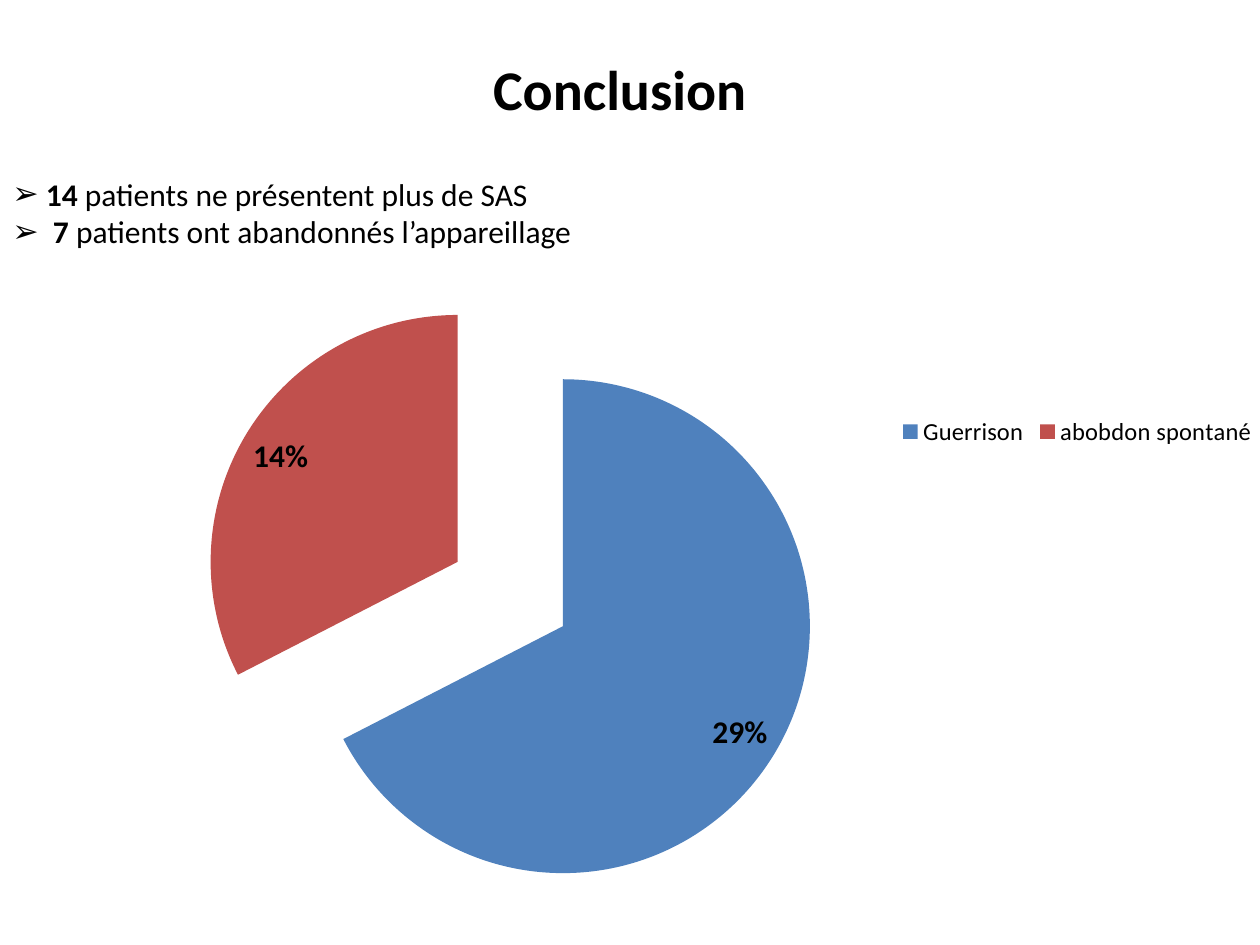
from dataclasses import dataclass

from lxml.etree import SubElement
from pptx import Presentation
from pptx.chart.data import CategoryChartData
from pptx.dml.color import RGBColor
from pptx.enum.chart import XL_CHART_TYPE as ChartType
from pptx.enum.chart import XL_LABEL_POSITION as LabelPosition
from pptx.enum.chart import XL_LEGEND_POSITION as LegendPosition
from pptx.enum.text import MSO_ANCHOR as Anchor
from pptx.enum.text import PP_ALIGN as Align
from pptx.oxml import parse_xml
from pptx.oxml.ns import nsdecls, qn
from pptx.util import Inches, Pt

FONT = "Calibri"
BLACK = RGBColor(0x00, 0x00, 0x00)
BLUE = RGBColor(0x4F, 0x81, 0xBD)
RED = RGBColor(0xC0, 0x50, 0x4D)


@dataclass
class Finding:
    count: str
    detail: str


@dataclass
class Slice:
    label: str
    share: float
    color: RGBColor


FINDINGS = [
    Finding(" 14", " patients ne présentent plus de SAS"),
    Finding("  7", " patients ont abandonnés l’appareillage"),
]
SLICES = [
    Slice("Guerrison", 0.29, BLUE),
    Slice("abobdon spontané", 0.14, RED),
]


def style_font(font, size: float, bold: bool = False) -> None:
    font.name = FONT
    font.size = Pt(size)
    font.bold = bold
    font.color.rgb = BLACK


def add_span(para, text: str, size: float, bold: bool = False) -> None:
    span = para.add_run()
    span.text = text
    style_font(span.font, size, bold)


def add_finding(para, finding: Finding) -> None:
    props = para._p.get_or_add_pPr()
    props.set("marL", "0")
    props.set("indent", "0")
    SubElement(props, qn("a:buFont"), typeface="Wingdings 2")
    SubElement(props, qn("a:buChar"), char="➢")
    props.find(qn("a:buFont")).set("typeface", "Arial")
    add_span(para, finding.count, 18, bold=True)
    add_span(para, finding.detail, 18)


def make_layout(x: float, y: float, w: float, h: float, inner: bool = False):
    """Manual layout, as fractions of the chart's size."""
    target = '<c:layoutTarget val="inner"/>' if inner else ""
    return parse_xml(
        f'<c:layout {nsdecls("c")}><c:manualLayout>{target}'
        '<c:xMode val="edge"/><c:yMode val="edge"/>'
        f'<c:x val="{x}"/><c:y val="{y}"/><c:w val="{w}"/><c:h val="{h}"/>'
        "</c:manualLayout></c:layout>"
    )


def add_pie(page, slices: list[Slice]) -> None:
    data = CategoryChartData(number_format="0%")
    data.categories = [item.label for item in slices]
    data.add_series("Series 1", [item.share for item in slices])
    chart = page.shapes.add_chart(
        ChartType.PIE_EXPLODED, Inches(0), Inches(2.11), Inches(10), Inches(5.16), data
    ).chart
    chart.has_title = False
    style_font(chart.font, 10)

    # Slices
    plot = chart.plots[0]
    plot.vary_by_categories = True
    series = plot.series[0]
    for index, item in enumerate(slices):
        fill = series.points[index].format.fill
        fill.solid()
        fill.fore_color.rgb = item.color
    for explosion in series._element.iter(qn("c:explosion")):
        explosion.set("val", "25")

    # Value labels
    plot.has_data_labels = True
    labels = plot.data_labels
    labels.show_value = True
    labels.show_percentage = False
    labels.number_format = "0%"
    labels.number_format_is_linked = False
    labels.position = LabelPosition.INSIDE_END
    style_font(labels.font, 18, bold=True)

    # Legend on one row, to the right of the pie
    chart.has_legend = True
    legend = chart.legend
    legend.position = LegendPosition.RIGHT
    legend.include_in_layout = False
    style_font(legend.font, 14)

    plot_area = chart._chartSpace.chart.plotArea
    for parent, layout in (
        (plot_area, make_layout(0.16, 0.03, 0.49, 0.95, inner=True)),
        (legend._element, make_layout(0.71, 0.21, 0.29, 0.09)),
    ):
        for old in parent.findall(qn("c:layout")):
            parent.remove(old)
        position = 0 if parent is plot_area else 1
        parent.insert(position, layout)


def main() -> None:
    deck = Presentation()
    deck.slide_width, deck.slide_height = Inches(10), Inches(7.5)
    page = deck.slides.add_slide(deck.slide_layouts[5])

    # Title
    title = page.shapes.title
    title.left, title.top = Inches(0.47), Inches(0.23)
    title.width, title.height = Inches(9), Inches(0.94)
    title.text_frame.vertical_anchor = Anchor.MIDDLE
    heading = title.text_frame.paragraphs[0]
    heading.alignment = Align.CENTER
    add_span(heading, "Conclusion ", 32, bold=True)

    add_pie(page, SLICES)

    # Findings
    box = page.shapes.add_textbox(Inches(0), Inches(1.33), Inches(6.56), Inches(0.71))
    frame = box.text_frame
    frame.word_wrap = True
    frame.vertical_anchor = Anchor.MIDDLE
    for index, finding in enumerate(FINDINGS):
        para = frame.add_paragraph() if index else frame.paragraphs[0]
        add_finding(para, finding)

    deck.save("out.pptx")


if __name__ == "__main__":
    main()
